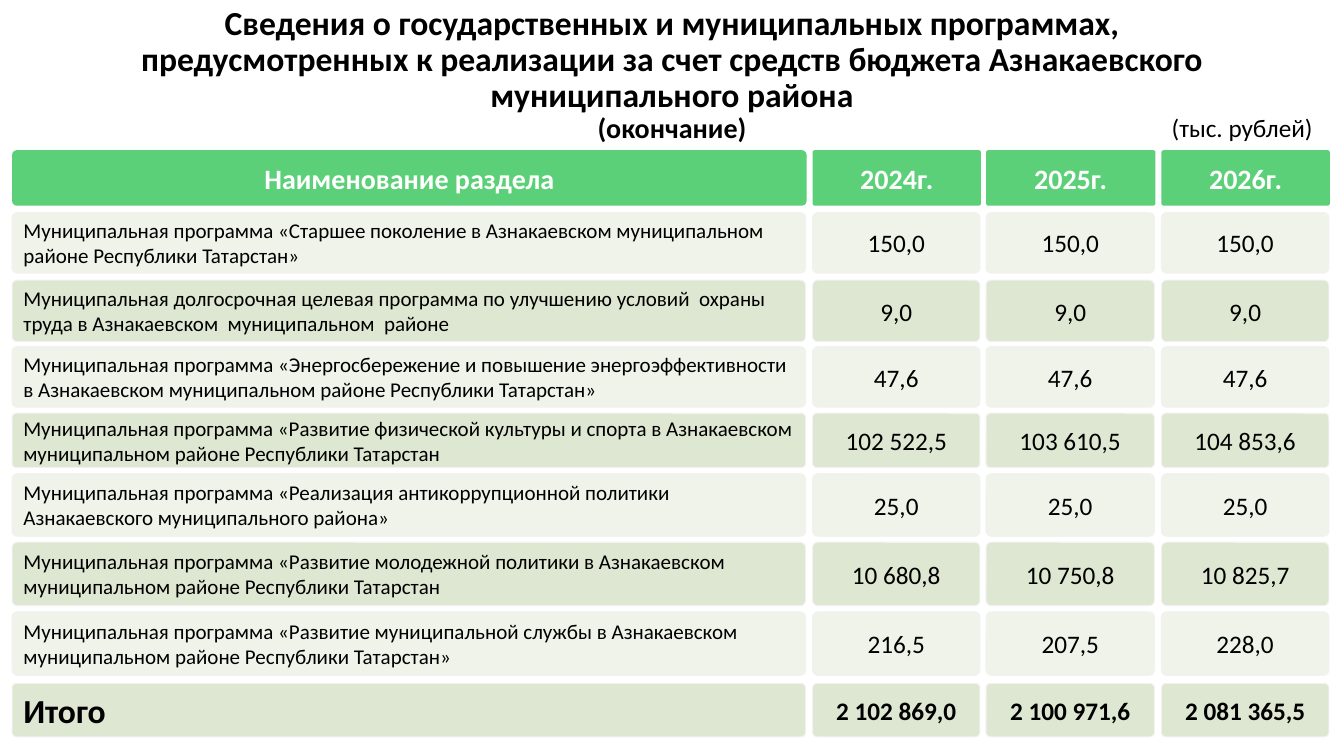
from pptx import Presentation
from pptx.dml.color import RGBColor
from pptx.enum.shapes import MSO_SHAPE
from pptx.enum.text import MSO_ANCHOR, MSO_AUTO_SIZE, PP_ALIGN
from pptx.util import Inches, Pt

BLACK = RGBColor(0x00, 0x00, 0x00)
WHITE = RGBColor(0xFF, 0xFF, 0xFF)
GREEN = RGBColor(0x5B, 0xD0, 0x78)
PALE = RGBColor(0xEF, 0xF3, 0xEA)
SAGE = RGBColor(0xDE, 0xE7, 0xD1)
EDGE = RGBColor(0xF2, 0xF2, 0xF2)

FONT = "Calibri"
COLS = [(0, 7.87), (7.94, 1.66), (9.66, 1.67), (11.4, 1.66)]  # offset, width
HEAD = ["Наименование раздела", "2024г.", "2025г.", "2026г."]
ROWS = [  # top, height, name, values
    (2.11, 0.6, "Муниципальная программа «Старшее поколение в Азнакаевском "
     "муниципальном районе Республики Татарстан»",
     ["150,0", "150,0", "150,0"]),
    (2.78, 0.61, "Муниципальная долгосрочная целевая программа по улучшению "
     "условий  охраны труда в Азнакаевском  муниципальном  районе",
     ["9,0", "9,0", "9,0"]),
    (3.44, 0.6, "Муниципальная программа «Энергосбережение и повышение "
     "энергоэффективности в Азнакаевском муниципальном районе "
     "Республики Татарстан»",
     ["47,6", "47,6", "47,6"]),
    (4.1, 0.54, "Муниципальная программа «Развитие физической культуры и "
     "спорта в Азнакаевском муниципальном районе Республики Татарстан",
     ["102 522,5", "103 610,5", "104 853,6"]),
    (4.7, 0.62, "Муниципальная программа «Реализация антикоррупционной "
     "политики Азнакаевского муниципального района»",
     ["25,0", "25,0", "25,0"]),
    (5.38, 0.63, "Муниципальная программа «Развитие молодежной политики в "
     "Азнакаевском муниципальном районе Республики Татарстан",
     ["10 680,8", "10 750,8", "10 825,7"]),
    (6.07, 0.63, "Муниципальная программа «Развитие муниципальной службы в "
     "Азнакаевском муниципальном районе Республики Татарстан»",
     ["216,5", "207,5", "228,0"]),
    (6.78, 0.53, "Итого", ["2 102 869,0", "2 100 971,6", "2 081 365,5"]),
]


def add_run(para, text, size, color=BLACK, bold=False):
    run = para.add_run()
    run.text = text
    run.font.name = FONT
    run.font.size = Pt(size)
    run.font.bold = bold
    run.font.color.rgb = color


def add_cell(slide, box, fill, text, size, color=BLACK, bold=False,
             align=PP_ALIGN.CENTER, edge=None, curve=0.083):
    cell = slide.shapes.add_shape(MSO_SHAPE.ROUNDED_RECTANGLE,
                                  *[Inches(n) for n in box])
    cell.adjustments[0] = curve
    cell.shadow.inherit = False
    cell.fill.solid()
    cell.fill.fore_color.rgb = fill
    if edge is None:
        cell.line.fill.background()
    else:
        cell.line.color.rgb = edge
        cell.line.width = Pt(0.75)
    frame = cell.text_frame
    frame.word_wrap = True
    frame.vertical_anchor = MSO_ANCHOR.MIDDLE
    para = frame.paragraphs[0]
    para.alignment = align
    add_run(para, text, size, color, bold)


def add_text(slide, box, lines, wrap=True, space=None):
    """Add a centred text box; each line is text, size and bold."""
    frame = slide.shapes.add_textbox(*[Inches(n) for n in box]).text_frame
    frame.word_wrap = wrap
    frame.auto_size = MSO_AUTO_SIZE.SHAPE_TO_FIT_TEXT
    for i, (text, size, bold) in enumerate(lines):
        para = frame.add_paragraph() if i else frame.paragraphs[0]
        para.alignment = PP_ALIGN.CENTER
        para.line_spacing = space
        add_run(para, text, size, bold=bold)


def add_head(slide, left, top, high):
    for i, ((shift, wide), text) in enumerate(zip(COLS, HEAD)):
        add_cell(slide, (left + shift, top, wide + 0.01, high), GREEN, text,
                 20, WHITE, True, curve=0.04 if i else 0.083)


def add_row(slide, left, top, high, fill, name, values, total=False):
    for i, ((shift, wide), text) in enumerate(zip(COLS, [name] + values)):
        size = 18 if i else 24 if total else 15
        align = PP_ALIGN.CENTER if i else PP_ALIGN.LEFT
        add_cell(slide, (left + shift, top, wide, high), fill, text, size,
                 bold=total, align=align, edge=EDGE)


def add_grid(slide, left):
    add_head(slide, left, 1.49, 0.55)
    for i, (top, high, name, values) in enumerate(ROWS):
        add_row(slide, left, top, high, SAGE if i % 2 else PALE, name,
                values, total=i == len(ROWS) - 1)


def main():
    deck = Presentation()
    deck.slide_width = Inches(13.33)
    deck.slide_height = Inches(7.5)
    slide = deck.slides.add_slide(deck.slide_layouts[6])
    add_text(slide, (1.27, 0.01, 10.79, 1.49), [
        ("Сведения о государственных и муниципальных программах, "
         "предусмотренных к реализации за счет средств бюджета "
         "Азнакаевского муниципального района", 24, True),
        ("(окончание)", 20, True),
    ], space=0.9)
    add_text(slide, (11.51, 1.07, 1.62, 0.4),
             [("(тыс. рублей)", 18, False)], wrap=False)
    add_grid(slide, 0.12)
    deck.save("out.pptx")


if __name__ == "__main__":
    main()
